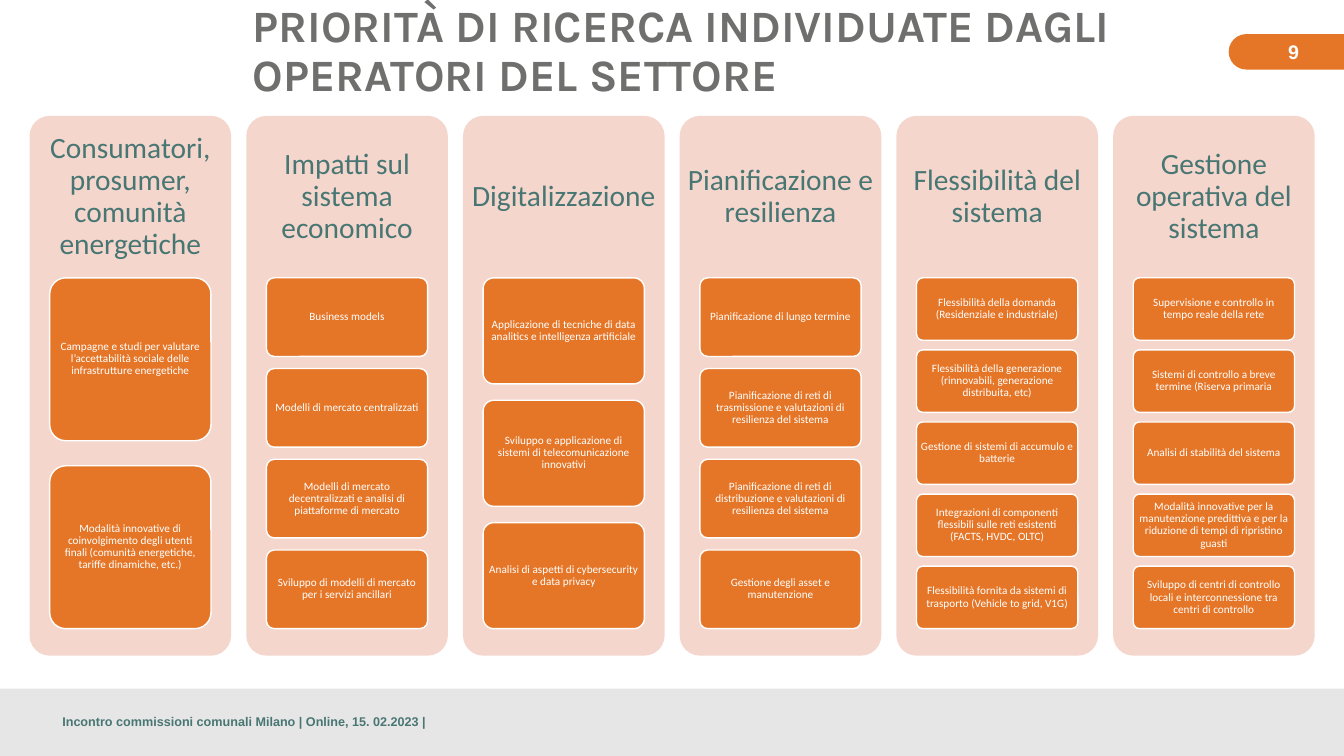
from dataclasses import dataclass

from lxml import etree
from pptx import Presentation
from pptx.dml.color import RGBColor
from pptx.enum.shapes import MSO_CONNECTOR, MSO_SHAPE
from pptx.enum.text import MSO_ANCHOR, PP_ALIGN
from pptx.oxml.ns import qn
from pptx.util import Emu, Inches, Pt

RECT = MSO_SHAPE.RECTANGLE
ROUND = MSO_SHAPE.ROUNDED_RECTANGLE
DELAY = MSO_SHAPE.FLOWCHART_DELAY
LINE = MSO_CONNECTOR.STRAIGHT
MIDDLE = MSO_ANCHOR.MIDDLE
LEFT = PP_ALIGN.LEFT
CENTER = PP_ALIGN.CENTER

WHITE = RGBColor(0xFF, 0xFF, 0xFF)
ORANGE = RGBColor(0xE5, 0x76, 0x27)
PINK = RGBColor(0xF5, 0xD6, 0xCD)
TEAL = RGBColor(0x47, 0x76, 0x73)
GRAY = RGBColor(0x6F, 0x6F, 0x6E)
PALE = RGBColor(0xE7, 0xE6, 0xE6)

WIDTH, HEIGHT = Inches(13.333), Inches(7.5)


@dataclass(frozen=True)
class Box:
    """Position and size in percent of the slide."""
    left: float
    top: float
    width: float
    height: float

    def place(self) -> tuple[Emu, Emu, Emu, Emu]:
        return (Emu(round(self.left * WIDTH / 100)), Emu(round(self.top * HEIGHT / 100)),
                Emu(round(self.width * WIDTH / 100)), Emu(round(self.height * HEIGHT / 100)))


@dataclass(frozen=True)
class Style:
    name: str
    size: int
    color: RGBColor
    bold: bool = False
    align: PP_ALIGN = CENTER
    side: float = 0.1
    edge: float = 0.05
    space: float = 0.9


@dataclass(frozen=True)
class Topic:
    head: str
    cards: tuple[str, ...]


TITLE = Style("Karla", 32, GRAY, True, LEFT)
NUMBER = Style("Arial", 14, WHITE, True, space=1.0)
HEAD = Style("Calibri", 21, TEAL, side=0.08, edge=0.09)
CARD = Style("Calibri", 8, WHITE, side=0.02, edge=0.02)
FOOTER = Style("Arial", 9, TEAL, True, LEFT)

PANEL = Box(2.2, 15.33, 15, 71.4)
PITCH = PANEL.width * 1.075
GAP = 2 / 13

TOPICS = (
    Topic("Consumatori, prosumer, comunità energetiche", (
        "Campagne e studi per valutare l’accettabilità sociale delle infrastrutture energetiche",
        "Modalità innovative di coinvolgimento degli utenti finali "
        "(comunità energetiche, tariffe dinamiche, etc.)")),
    Topic("Impatti sul sistema economico", (
        "Business models",
        "Modelli di mercato centralizzati",
        "Modelli di mercato decentralizzati e analisi di piattaforme di mercato",
        "Sviluppo di modelli di mercato per i servizi ancillari")),
    Topic("Digitalizzazione", (
        "Applicazione di tecniche di data analitics e intelligenza artificiale",
        "Sviluppo e applicazione di sistemi di telecomunicazione innovativi",
        "Analisi di aspetti di cybersecurity e data privacy")),
    Topic("Pianificazione e resilienza", (
        "Pianificazione di lungo termine",
        "Pianificazione di reti di trasmissione e valutazioni di resilienza del sistema",
        "Pianificazione di reti di distribuzione e valutazioni di resilienza del sistema",
        "Gestione degli asset e manutenzione")),
    Topic("Flessibilità del sistema", (
        "Flessibilità della domanda (Residenziale e industriale)",
        "Flessibilità della generazione (rinnovabili, generazione distribuita, etc)",
        "Gestione di sistemi di accumulo e batterie",
        "Integrazioni di componenti flessibili sulle reti esistenti (FACTS, HVDC, OLTC)",
        "Flessibilità fornita da sistemi di trasporto (Vehicle to grid, V1G)")),
    Topic("Gestione operativa del sistema", (
        "Supervisione e controllo in tempo reale della rete",
        "Sistemi di controllo a breve termine (Riserva primaria",
        "Analisi di stabilità del sistema",
        "Modalità innovative per la manutenzione predittiva e per la riduzione "
        "di tempi di ripristino guasti",
        "Sviluppo di centri di controllo locali e interconnessione tra centri di controllo")),
)


def write(shape, text: str, style: Style) -> None:
    frame = shape.text_frame
    side, edge = Inches(style.side), Inches(style.edge)
    form = {"word_wrap": True, "vertical_anchor": MIDDLE, "margin_left": side,
            "margin_right": side, "margin_top": edge, "margin_bottom": edge}
    for key, value in form.items():
        setattr(frame, key, value)
    para = frame.paragraphs[0]
    para.alignment = style.align
    para.line_spacing = style.space
    run = para.add_run()
    run.text = text
    for key, value in {"name": style.name, "size": Pt(style.size), "bold": style.bold}.items():
        setattr(run.font, key, value)
    run.font.color.rgb = style.color


def label(slide, box: Box, text: str, style: Style) -> None:
    write(slide.shapes.add_textbox(*box.place()), text, style)


def block(slide, kind: MSO_SHAPE, box: Box, fill: RGBColor, rim: bool = False, turn: int = 0):
    shape = slide.shapes.add_shape(kind, *box.place())
    shape.shadow.inherit = False
    shape.rotation = turn
    shape.fill.solid()
    shape.fill.fore_color.rgb = fill
    if kind == ROUND:
        shape.adjustments[0] = 0.1
    if rim:
        shape.line.color.rgb = WHITE
        shape.line.width = Pt(1)
    else:
        shape.line.fill.background()
    return shape


def rule(slide, box: Box) -> None:
    left, top, width, height = box.place()
    line = slide.shapes.add_connector(LINE, left, top, left + width, top + height)
    line.line.color.rgb = WHITE
    line.line.width = Pt(1.5)
    etree.SubElement(line._element.spPr, qn("a:effectLst"))


def column(slide, index: int, topic: Topic) -> None:
    left = PANEL.left + index * PITCH
    block(slide, ROUND, Box(left, PANEL.top, PANEL.width, PANEL.height), PINK)
    head = PANEL.height * 0.3
    label(slide, Box(left, PANEL.top, PANEL.width, head), topic.head, HEAD)
    count = len(topic.cards)
    tall = PANEL.height * 0.65 / (count + (count - 1) * GAP)
    for row, text in enumerate(topic.cards):
        top = PANEL.top + head + row * tall * (1 + GAP)
        box = Box(left + PANEL.width * 0.1, top, PANEL.width * 0.8, tall)
        write(block(slide, ROUND, box, ORANGE, rim=True), text, CARD)


def main() -> None:
    deck = Presentation()
    deck.slide_width, deck.slide_height = WIDTH, HEIGHT
    slide = deck.slides.add_slide(deck.slide_layouts[6])
    block(slide, RECT, Box(0, 91.1, 100, 8.9), PALE)
    block(slide, DELAY, Box(91.42, 4.5, 2.63, 4.7), ORANGE, turn=180)
    block(slide, RECT, Box(94.05, 4.5, 5.95, 4.7), ORANGE, turn=180)
    rule(slide, Box(0, 90.93, 100, 0))
    label(slide, Box(18.08, 2, 75.6, 9.87),
          "PRIORITÀ DI RICERCA INDIVIDUATE DAGLI OPERATORI DEL SETTORE", TITLE)
    label(slide, Box(92.5, 4.5, 7.5, 4.7), "9", NUMBER)
    for index, topic in enumerate(TOPICS):
        column(slide, index, topic)
    label(slide, Box(3.9, 93.87, 70.88, 3.33),
          "Incontro commissioni comunali Milano | Online, 15. 02.2023 |", FOOTER)
    deck.save("out.pptx")


if __name__ == "__main__":
    main()
